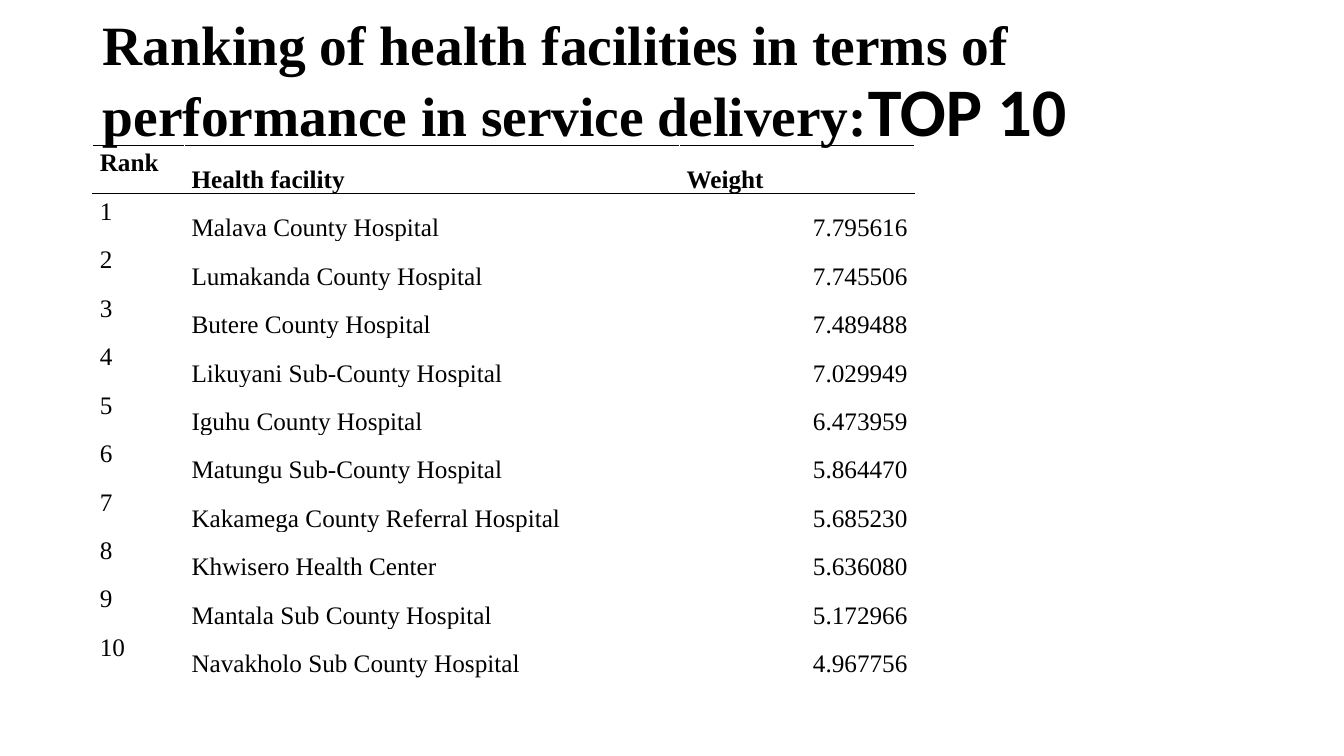
from typing import NamedTuple

from lxml import etree
from pptx import Presentation
from pptx.dml.color import RGBColor
from pptx.enum.text import MSO_ANCHOR, PP_ALIGN
from pptx.oxml.ns import qn
from pptx.util import Inches, Pt

TOP, MIDDLE, BOTTOM = MSO_ANCHOR.TOP, MSO_ANCHOR.MIDDLE, MSO_ANCHOR.BOTTOM
LEFT, RIGHT = PP_ALIGN.LEFT, PP_ALIGN.RIGHT
SERIF, SANS = "Times New Roman", "Calibri"
BLACK = "000000"


class Column(NamedTuple):
    heading: str
    width: float
    anchor: MSO_ANCHOR
    align: PP_ALIGN


class Facility(NamedTuple):
    name: str
    weight: str


COLUMNS = [
    Column("Rank", 0.91, TOP, LEFT),
    Column("Health facility", 4.91, BOTTOM, LEFT),
    Column("Weight", 2.33, BOTTOM, RIGHT),
]
FACILITIES = [
    Facility("Malava County Hospital", "7.795616"),
    Facility("Lumakanda County Hospital", "7.745506"),
    Facility("Butere County Hospital", "7.489488"),
    Facility("Likuyani Sub-County Hospital", "7.029949"),
    Facility("Iguhu County Hospital", "6.473959"),
    Facility("Matungu Sub-County Hospital", "5.864470"),
    Facility("Kakamega County Referral Hospital", "5.685230"),
    Facility("Khwisero Health Center", "5.636080"),
    Facility("Mantala Sub County Hospital", "5.172966"),
    Facility("Navakholo Sub County Hospital", "4.967756"),
]
ROW_HEIGHT = 0.481
CELL_MARGIN = 0.07


def color(value: str) -> RGBColor:
    return RGBColor.from_string(value)


def add_text(p, text: str, *, size: float = 18, font: str = SERIF, bold: bool = False,
             align: PP_ALIGN = LEFT, spacing: float = 1.15) -> None:
    p.alignment = align
    p.line_spacing = spacing
    r = p.add_run()
    r.text = text
    r.font.size = Pt(size)
    r.font.name = font
    r.font.bold = bold
    r.font.color.rgb = color(BLACK)


def add_borders(cell, *sides: str) -> None:
    """Draw 1 pt lines on the given sides, named lnT and lnB in that order."""
    props = cell._tc.get_or_add_tcPr()
    for i, side in enumerate(sides):
        ln = etree.Element(qn(f"a:{side}"), w=str(Pt(1)))
        fill = etree.SubElement(ln, qn("a:solidFill"))
        etree.SubElement(fill, qn("a:srgbClr"), val=BLACK)
        props.insert(i, ln)


def add_title(s) -> None:
    tf = s.shapes.add_textbox(Inches(0.92), Inches(0.4), Inches(11.5), Inches(1.45)).text_frame
    tf.word_wrap = True
    tf.vertical_anchor = MIDDLE
    tf.margin_bottom = Inches(0.62)
    p = tf.paragraphs[0]
    add_text(p, "Ranking of health facilities in terms of performance in service delivery:",
             size=39.6, bold=True, spacing=0.9)
    add_text(p, "TOP 10", size=48.6, font=SANS, bold=True, spacing=0.9)


def add_ranking(s) -> None:
    rows = [[c.heading for c in COLUMNS]]
    rows += [[str(rank), f.name, f.weight] for rank, f in enumerate(FACILITIES, 1)]
    width = sum(c.width for c in COLUMNS)
    table = s.shapes.add_table(len(rows), len(COLUMNS), Inches(0.92), Inches(1.44),
                               Inches(width), Inches(ROW_HEIGHT * len(rows))).table
    table.first_row = table.horz_banding = False
    for column, c in zip(table.columns, COLUMNS):
        column.width = Inches(c.width)
    for i, row in enumerate(rows):
        table.rows[i].height = Inches(ROW_HEIGHT)
        header = i == 0
        for j, (text, c) in enumerate(zip(row, COLUMNS)):
            cell = table.cell(i, j)
            cell.fill.background()
            cell.vertical_anchor = c.anchor
            cell.margin_left = cell.margin_right = Inches(CELL_MARGIN)
            cell.margin_top = cell.margin_bottom = 0
            add_text(cell.text_frame.paragraphs[0], text, bold=header,
                     align=LEFT if header else c.align)
            if header:
                add_borders(cell, "lnT", "lnB")
            elif i == 1:
                add_borders(cell, "lnT")


def main() -> None:
    prs = Presentation()
    prs.slide_width, prs.slide_height = Inches(13.33), Inches(7.5)
    s = prs.slides.add_slide(prs.slide_layouts[6])
    add_title(s)
    add_ranking(s)
    prs.save("out.pptx")


if __name__ == "__main__":
    main()
